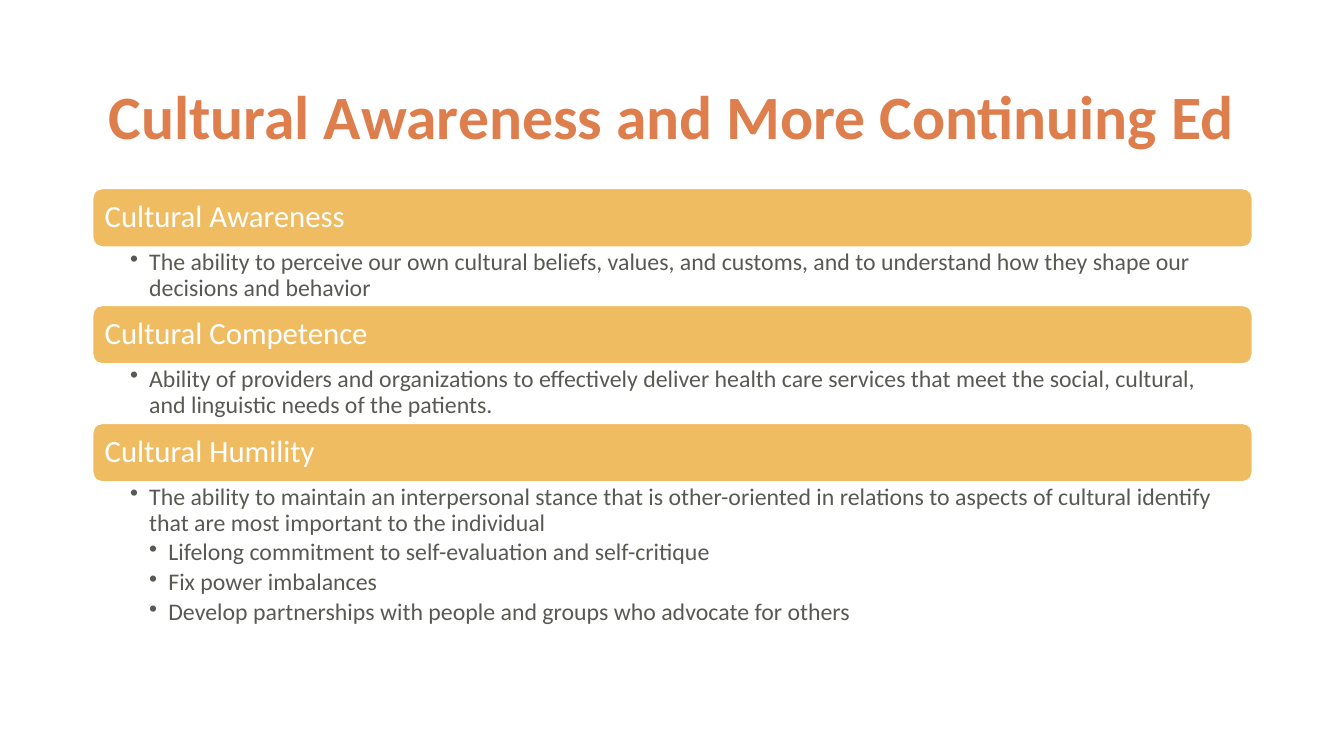
"""Build the slide on cultural awareness and continuing education."""
import dataclasses

import lxml.etree
import pptx
import pptx.dml.color
import pptx.enum.shapes
import pptx.enum.text
import pptx.oxml.ns
import pptx.util

Inches = pptx.util.Inches
Pt = pptx.util.Pt
Anchor = pptx.enum.text.MSO_ANCHOR
Alignment = pptx.enum.text.PP_ALIGN


@dataclasses.dataclass(frozen=True)
class Theme:
    """Hold the colours, font and type sizes of the slide."""

    font: str = "Calibri"
    title_color: str = "DD7E4C"
    bar_color: str = "F0BC62"
    bar_text_color: str = "FFFFFF"
    body_color: str = "595954"
    title_size: int = 44
    heading_size: int = 22
    body_size: int = 17


class SlideBuilder:
    """Draw each kind of element on the current slide."""

    def __init__(self, slide, theme):
        """Keep the slide and its theme."""
        self.slide = slide
        self.theme = theme

    def set_frame(self, text_frame, anchor, insets):
        """Set wrapping, anchor and left, top, right, bottom insets."""
        text_frame.word_wrap = True
        text_frame.vertical_anchor = anchor
        left, top, right, bottom = (Inches(inset) for inset in insets)
        text_frame.margin_left, text_frame.margin_top = left, top
        text_frame.margin_right, text_frame.margin_bottom = right, bottom

    def format_paragraph(self, paragraph, size, color, bold=False):
        """Set the line spacing and the look of the runs."""
        paragraph.line_spacing = 0.9
        for run in paragraph.runs:
            run.font.name = self.theme.font
            run.font.size = Pt(size)
            run.font.bold = bold
            run.font.color.rgb = pptx.dml.color.RGBColor.from_string(color)

    def title(self, text, left, top, width, height):
        """Add the centred slide title."""
        box = self.slide.shapes.add_textbox(
            Inches(left), Inches(top), Inches(width), Inches(height))
        self.set_frame(box.text_frame, Anchor.BOTTOM, (0.1, 0.05, 0.1, 0.05))
        box.text_frame.text = text
        paragraph = box.text_frame.paragraphs[0]
        paragraph.alignment = Alignment.CENTER
        self.format_paragraph(
            paragraph, self.theme.title_size, self.theme.title_color, bold=True)

    def heading_bar(self, text, left, top, width, height):
        """Add a rounded bar with a section heading."""
        bar = self.slide.shapes.add_shape(
            pptx.enum.shapes.MSO_SHAPE.ROUNDED_RECTANGLE,
            Inches(left), Inches(top), Inches(width), Inches(height))
        bar.shadow.inherit = False
        bar.fill.solid()
        bar.fill.fore_color.rgb = pptx.dml.color.RGBColor.from_string(
            self.theme.bar_color)
        bar.line.color.rgb = pptx.dml.color.RGBColor.from_string(
            self.theme.bar_text_color)
        bar.line.width = Pt(1)
        self.set_frame(bar.text_frame, Anchor.MIDDLE, (0.09, 0.09, 0.09, 0.09))
        bar.text_frame.text = text
        paragraph = bar.text_frame.paragraphs[0]
        paragraph.alignment = Alignment.LEFT
        self.format_paragraph(
            paragraph, self.theme.heading_size, self.theme.bar_text_color)

    def bullet_list(self, items, left, top, width, height):
        """Add a definition followed by its indented points."""
        box = self.slide.shapes.add_textbox(
            Inches(left), Inches(top), Inches(width), Inches(height))
        self.set_frame(box.text_frame, Anchor.TOP, (0.37, 0.03, 0.17, 0.03))
        box.text_frame.text = "\n".join(items)
        for index, paragraph in enumerate(box.text_frame.paragraphs):
            paragraph.level = 1 if index == 0 else 2
            self.add_bullet(paragraph)
            paragraph.space_after = Pt(3)
            self.format_paragraph(
                paragraph, self.theme.body_size, self.theme.body_color)

    def add_bullet(self, paragraph):
        """Give a paragraph a bullet and a hanging indent for its level."""
        indent = Inches(0.19)
        properties = paragraph._p.get_or_add_pPr()
        properties.set("marL", str(indent * paragraph.level))
        properties.set("indent", str(-indent))
        bullet = lxml.etree.SubElement(
            properties, pptx.oxml.ns.qn("a:buChar"))
        bullet.set("char", "•")


SECTIONS = [
    ("Cultural Awareness", 0.58, [
        "The ability to perceive our own cultural beliefs, values, and customs, "
        "and to understand how they shape our decisions and behavior",
    ]),
    ("Cultural Competence", 0.59, [
        "Ability of providers and organizations to effectively deliver health "
        "care services that meet the social, cultural, and linguistic needs of "
        "the patients.",
    ]),
    ("Cultural Humility", 1.54, [
        "The ability to maintain an interpersonal stance that is other-oriented "
        "in relations to aspects of cultural identify that are most important "
        "to the individual",
        "Lifelong commitment to self-evaluation and self-critique",
        "Fix power imbalances",
        "Develop partnerships with people and groups who advocate for others",
    ]),
]


def main():
    """Create the presentation and save it."""
    presentation = pptx.Presentation()
    presentation.slide_width = Inches(13.33)
    presentation.slide_height = Inches(7.5)
    slide = presentation.slides.add_slide(presentation.slide_layouts[6])
    builder = SlideBuilder(slide, Theme())
    builder.title(
        "Cultural Awareness and More Continuing Ed", 0.57, 0.13, 12.19, 1.44)

    left, top, width, bar_height = 0.92, 1.87, 11.5, 0.58
    for heading, list_height, items in SECTIONS:
        builder.heading_bar(heading, left, top, width, bar_height)
        top += bar_height
        builder.bullet_list(items, left, top, width, list_height)
        top += list_height

    presentation.save("out.pptx")


if __name__ == "__main__":
    main()
